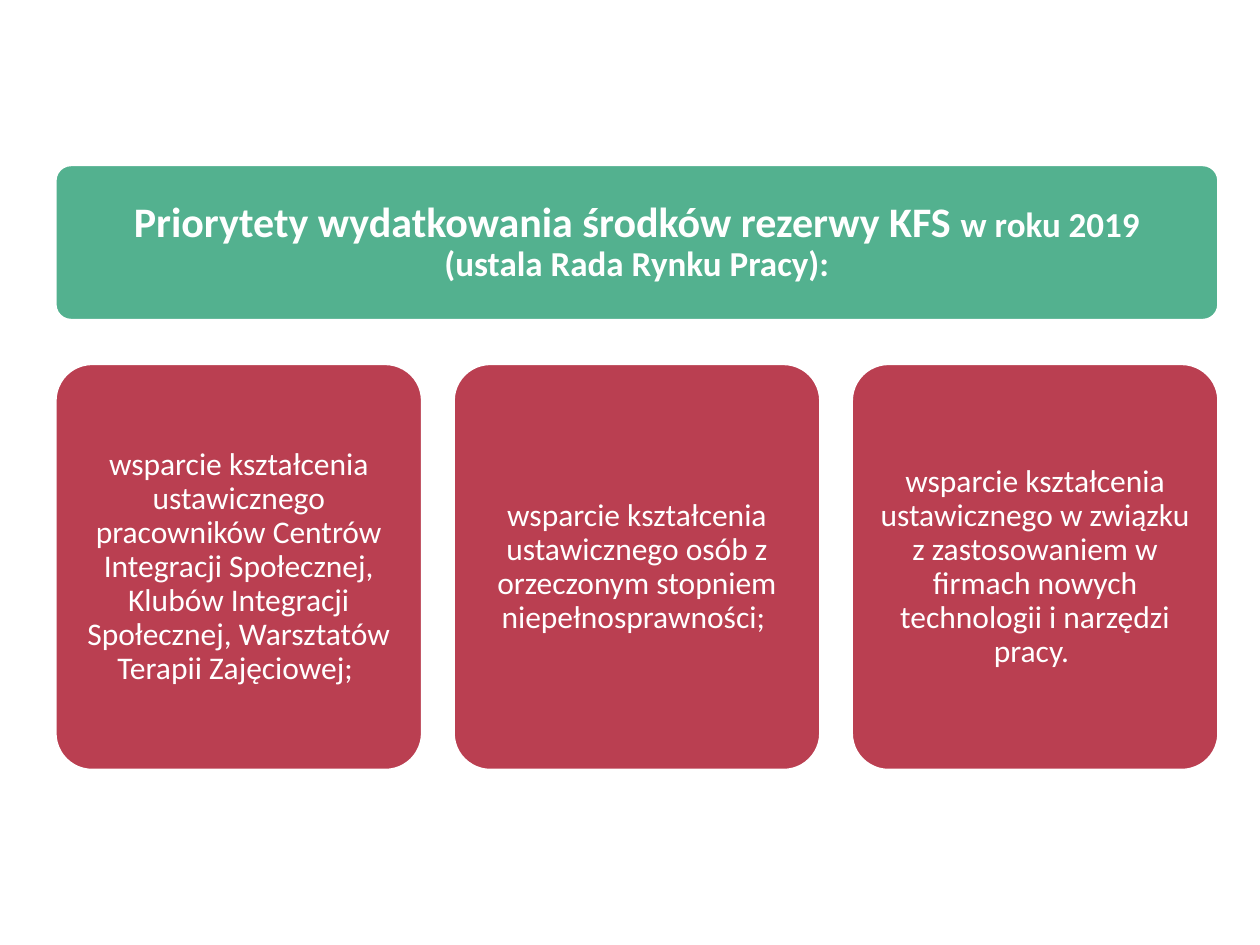
"""Build a slide with a title banner above a row of priority cards."""
import pptx
import pptx.dml.color
import pptx.enum.shapes
import pptx.enum.text
import pptx.util
from pptx.util import Cm

GREEN, RED, WHITE = "53B18F", "BA3F51", "FFFFFF"
TITLE_FONT = {"name": "Calibri", "bold": True}
CARD_FONT = {"name": "Calibri", "bold": False, "size": pptx.util.Pt(18)}
PRIORITIES = [
    "wsparcie kształcenia ustawicznego pracowników Centrów Integracji Społecznej, "
    "Klubów Integracji Społecznej, Warsztatów Terapii Zajęciowej; ",
    "wsparcie kształcenia ustawicznego osób z orzeczonym stopniem niepełnosprawności; ",
    "wsparcie kształcenia ustawicznego w związku z zastosowaniem w firmach nowych "
    "technologii i narzędzi pracy. ",
]


def color(value):
    """Turn a hex string into a colour."""
    return pptx.dml.color.RGBColor.from_string(value)


def set_attributes(target, values):
    """Set each named format value on the target."""
    for name, value in values.items():
        setattr(target, name, value)


def add_panel(slide, left, top, width, height, fill):
    """Add a rounded panel with a white outline."""
    shape = slide.shapes.add_shape(
        pptx.enum.shapes.MSO_SHAPE.ROUNDED_RECTANGLE, left, top, width, height)
    shape.adjustments[0] = 0.1
    shape.shadow.inherit = False
    shape.fill.solid()
    shape.fill.fore_color.rgb = color(fill)
    shape.line.color.rgb = color(WHITE)
    shape.line.width = pptx.util.Pt(1.25)
    return shape


def format_frame(frame, margin):
    """Centre the text frame both ways and return its first paragraph."""
    set_attributes(frame, {
        "word_wrap": True,
        "auto_size": pptx.enum.text.MSO_AUTO_SIZE.NONE,
        "vertical_anchor": pptx.enum.text.MSO_ANCHOR.MIDDLE,
        "margin_left": margin, "margin_right": margin,
        "margin_top": margin, "margin_bottom": margin,
    })
    paragraph = frame.paragraphs[0]
    set_attributes(paragraph, {
        "alignment": pptx.enum.text.PP_ALIGN.CENTER,
        "line_spacing": 0.9, "space_before": pptx.util.Pt(0),
    })
    return paragraph


def add_run(paragraph, text, font):
    """Add a white run with the given font values."""
    run = paragraph.add_run()
    run.text = text
    set_attributes(run.font, font)
    run.font.color.rgb = color(WHITE)


def add_banner(slide, left, top, width, height):
    """Place the title on a green banner."""
    add_panel(slide, left, top, width, height, GREEN)
    title = slide.shapes.title
    inset = Cm(0.09)
    set_attributes(title, {
        "left": left + inset, "top": top + inset,
        "width": width - 2 * inset, "height": height - 2 * inset,
    })
    slide.shapes.element.append(title.element)
    paragraph = format_frame(title.text_frame, Cm(0.25))
    small = {**TITLE_FONT, "size": pptx.util.Pt(20)}
    add_run(paragraph, "Priorytety wydatkowania środków rezerwy KFS ",
            {**TITLE_FONT, "size": pptx.util.Pt(24)})
    add_run(paragraph, "w roku 2019", small)
    paragraph.add_line_break()
    add_run(paragraph, "(ustala Rada Rynku Pracy):", small)


def add_cards(slide, left, top, width, height, texts):
    """Spread one red card per text evenly across the box."""
    gap = Cm(0.64)
    card_width = (width - gap * (len(texts) - 1)) // len(texts)
    for index, text in enumerate(texts):
        card = add_panel(slide, left + index * (card_width + gap), top,
                         card_width, height, RED)
        add_run(format_frame(card.text_frame, Cm(0.18)), text, CARD_FONT)


def main():
    """Build and save the presentation."""
    presentation = pptx.Presentation()
    presentation.slide_width, presentation.slide_height = Cm(25.4), Cm(19.05)
    slide = presentation.slides.add_slide(presentation.slide_layouts[5])
    left, width = Cm(1.12), Cm(23.44)
    add_banner(slide, left, Cm(3.33), width, Cm(3.12))
    add_cards(slide, left, Cm(7.34), width, Cm(8.18), PRIORITIES)
    presentation.save("out.pptx")


if __name__ == "__main__":
    main()
